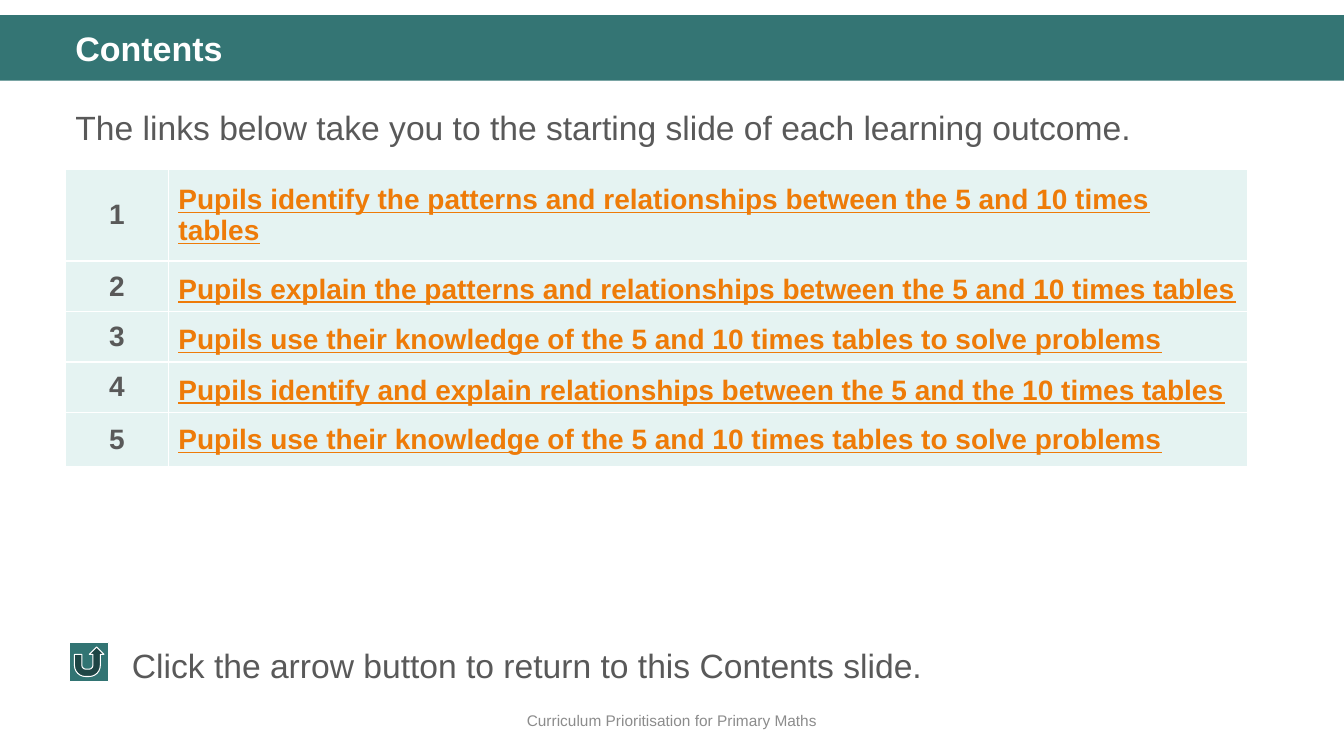
from dataclasses import dataclass

from pptx import Presentation
from pptx.dml.color import RGBColor
from pptx.enum.shapes import MSO_SHAPE
from pptx.enum.text import MSO_ANCHOR, PP_ALIGN
from pptx.util import Inches, Pt

RECTANGLE = MSO_SHAPE.RECTANGLE
RETURN_BUTTON = MSO_SHAPE.ACTION_BUTTON_RETURN
TOP, MIDDLE = MSO_ANCHOR.TOP, MSO_ANCHOR.MIDDLE
LEFT, CENTER = PP_ALIGN.LEFT, PP_ALIGN.CENTER


@dataclass(frozen=True)
class Theme:
    font: str = "Arial"
    band: str = "347574"
    button: str = "327473"
    white: str = "FFFFFF"
    body: str = "595959"
    muted: str = "8C8C8C"
    link: str = "EE7B08"
    cell: str = "E5F3F2"
    title_size: float = 24.3
    body_size: float = 24
    table_size: float = 20
    footer_size: float = 11


class SlideBuilder:
    def __init__(self, slide, theme):
        self.slide = slide
        self.theme = theme

    def set_text(self, frame, words, size, color, bold=False, underline=False,
                 align=LEFT, spacing=None, before=None):
        frame.text = words
        paragraph = frame.paragraphs[0]
        paragraph.alignment = align
        if spacing:
            paragraph.line_spacing = spacing
        if before:
            paragraph.space_before = Pt(before)
        for run in paragraph.runs:
            font = run.font
            font.name = self.theme.font
            font.size = Pt(size)
            font.bold = bold
            font.underline = underline
            font.color.rgb = RGBColor.from_string(color)

    def text(self, place, words, size, color, anchor=TOP, **style):
        box = self.slide.shapes.add_textbox(*map(Inches, place))
        frame = box.text_frame
        frame.word_wrap = True
        frame.vertical_anchor = anchor
        self.set_text(frame, words, size, color, **style)

    def shape(self, kind, place, fill, line=None):
        shape = self.slide.shapes.add_shape(kind, *map(Inches, place))
        shape.shadow.inherit = False
        shape.fill.solid()
        shape.fill.fore_color.rgb = RGBColor.from_string(fill)
        if line:
            shape.line.color.rgb = RGBColor.from_string(line)
            shape.line.width = Pt(0.75)
        else:
            shape.line.fill.background()

    def outcomes(self, left, top, widths, heights, outcomes):
        theme = self.theme
        table = self.slide.shapes.add_table(
            len(heights), len(widths), Inches(left), Inches(top),
            Inches(sum(widths)), Inches(sum(heights))).table
        table.horz_banding = False
        for column, width in zip(table.columns, widths):
            column.width = Inches(width)
        for row, height in zip(table.rows, heights):
            row.height = Inches(height)
        for index, (outcome, spacing) in enumerate(outcomes):
            number_cell, link_cell = table.rows[index].cells
            for cell in (number_cell, link_cell):
                cell.vertical_anchor = MIDDLE
                cell.fill.solid()
                cell.fill.fore_color.rgb = RGBColor.from_string(theme.cell)
            self.set_text(number_cell.text_frame, str(index + 1), theme.table_size,
                          theme.body, bold=True, align=CENTER)
            self.set_text(link_cell.text_frame, outcome, theme.table_size,
                          theme.link, bold=True, underline=True, spacing=spacing)


OUTCOMES = [
    ("Pupils identify the patterns and relationships between the 5 and 10 times tables", None),
    ("Pupils explain the patterns and relationships between the 5 and 10 times tables", 1.2),
    ("Pupils use their knowledge of the 5 and 10 times tables to solve problems", 1.2),
    ("Pupils identify and explain relationships between the 5 and the 10 times tables", 1.2),
    ("Pupils use their knowledge of the 5 and 10 times tables to solve problems", None),
]


def main():
    presentation = Presentation()
    presentation.slide_width = Inches(13.33)
    presentation.slide_height = Inches(7.5)
    theme = Theme()
    contents = SlideBuilder(
        presentation.slides.add_slide(presentation.slide_layouts[6]), theme)

    contents.shape(RECTANGLE, (0, 0.15, 13.33, 0.65), theme.band)
    contents.text((0, 6.95, 13.33, 0.4), "Curriculum Prioritisation for Primary Maths",
                  theme.footer_size, theme.muted, anchor=MIDDLE, align=CENTER)
    contents.text((0.65, 0.93, 12.18, 0.65),
                  "The links below take you to the starting slide of each learning outcome.",
                  theme.body_size, theme.body, spacing=1.2, before=10)
    contents.outcomes(0.65, 1.68, (1.02, 10.7), (0.91, 0.48, 0.48, 0.48, 0.54), OUTCOMES)
    contents.shape(RETURN_BUTTON, (0.69, 6.37, 0.39, 0.39), theme.button, theme.white)
    contents.text((1.21, 6.35, 11.32, 0.5),
                  "Click the arrow button to return to this Contents slide.",
                  theme.body_size, theme.body)
    contents.text((0.65, 0.27, 12.18, 0.47), "Contents", theme.title_size,
                  theme.white, bold=True, spacing=0.9)

    presentation.save("out.pptx")


if __name__ == "__main__":
    main()
